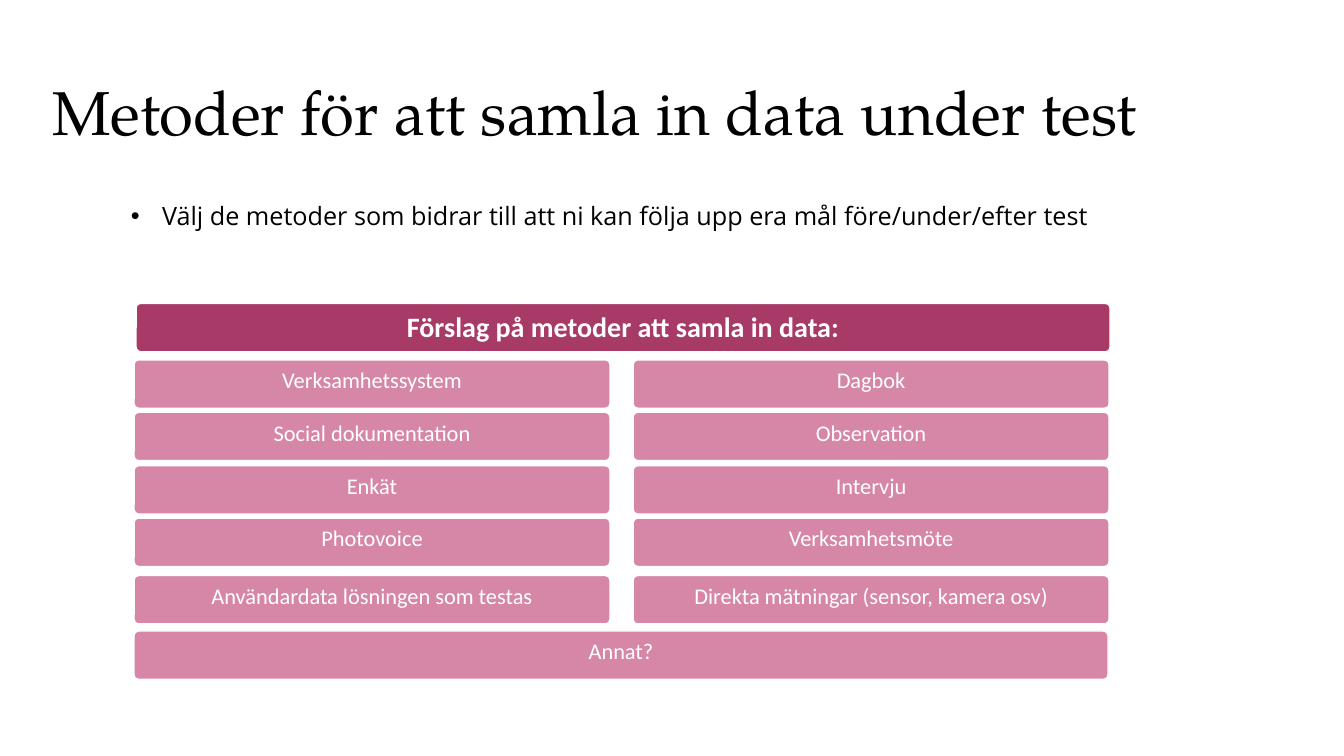
from lxml import etree
from pptx import Presentation
from pptx.dml.color import RGBColor
from pptx.enum.shapes import MSO_SHAPE
from pptx.enum.text import MSO_ANCHOR, PP_ALIGN
from pptx.oxml.ns import qn
from pptx.util import Inches, Pt

ROUNDED = MSO_SHAPE.ROUNDED_RECTANGLE
TOP, MIDDLE = MSO_ANCHOR.TOP, MSO_ANCHOR.MIDDLE
LEFT, CENTER = PP_ALIGN.LEFT, PP_ALIGN.CENTER

COLORS = {"text": "000000", "white": "FFFFFF", "header": "A83A67", "method": "D687A7"}

# Grid of method boxes, in inches
COLUMNS = (1.33, 6.28)
ROWS = (3.57, 4.09, 4.62, 5.14, 5.71)
BOX_W, BOX_H = 4.72, 0.48
FULL_W = 9.66
HEADER_LEFT, HEADER_TOP, LAST_TOP = 1.35, 3.01, 6.26

METHODS = (
    ("Verksamhetssystem", "Dagbok"),
    ("Social dokumentation", "Observation"),
    ("Enkät", "Intervju"),
    ("Photovoice", "Verksamhetsmöte"),
    ("Användardata lösningen som testas", "Direkta mätningar (sensor, kamera osv)"),
)


def color(name):
    return RGBColor.from_string(COLORS[name])


def add_bullet(p, indent):
    pPr = p._p.get_or_add_pPr()
    pPr.set("marL", str(Inches(indent)))
    pPr.set("indent", str(-Inches(indent)))
    etree.SubElement(pPr, qn("a:buFont")).set("typeface", "Arial")
    etree.SubElement(pPr, qn("a:buChar")).set("char", "•")


def write(shape, text, size, font, fill="text", bold=False, align=LEFT,
          anchor=TOP, spacing=None, indent=None):
    tf = shape.text_frame
    tf.word_wrap = True
    tf.vertical_anchor = anchor
    p = tf.paragraphs[0]
    p.alignment = align
    if spacing:
        p.line_spacing = spacing
    if indent:
        add_bullet(p, indent)
    r = p.add_run()
    r.text = text
    r.font.size = Pt(size)
    r.font.name = font
    r.font.bold = bold
    r.font.color.rgb = color(fill)


def add_text(s, x, y, w, h, text, **fmt):
    box = s.shapes.add_textbox(Inches(x), Inches(y), Inches(w), Inches(h))
    write(box, text, **fmt)


def add_box(s, x, y, w, text, fill="method", size=16, bold=False):
    box = s.shapes.add_shape(ROUNDED, Inches(x), Inches(y), Inches(w), Inches(BOX_H))
    box.adjustments[0] = 0.1
    box.shadow.inherit = False
    box.fill.solid()
    box.fill.fore_color.rgb = color(fill)
    box.line.color.rgb = color("white")
    box.line.width = Pt(1)
    write(box, text, size=size, font="Calibri", fill="white", bold=bold, align=CENTER)


def main():
    prs = Presentation()
    prs.slide_width, prs.slide_height = Inches(13.33), Inches(7.5)
    s = prs.slides.add_slide(prs.slide_layouts[6])

    # Title and instruction
    add_text(s, 0.42, 0.42, 11.5, 1.45, "Metoder för att samla in data under test",
             size=44.1, font="TeX Gyre Pagella", anchor=MIDDLE, spacing=0.9)
    add_text(s, 1.2, 1.94, 10.4, 1.01,
             "Välj de metoder som bidrar till att ni kan följa upp era mål före/under/efter test",
             size=18, font="Open Sans", indent=0.31)

    # Header, method grid and closing box
    add_box(s, HEADER_LEFT, HEADER_TOP, FULL_W, "Förslag på metoder att samla in data:",
            fill="header", size=20, bold=True)
    for y, pair in zip(ROWS, METHODS):
        for x, method in zip(COLUMNS, pair):
            add_box(s, x, y, BOX_W, method)
    add_box(s, COLUMNS[0], LAST_TOP, FULL_W, "Annat?")

    prs.save("out.pptx")


if __name__ == "__main__":
    main()
